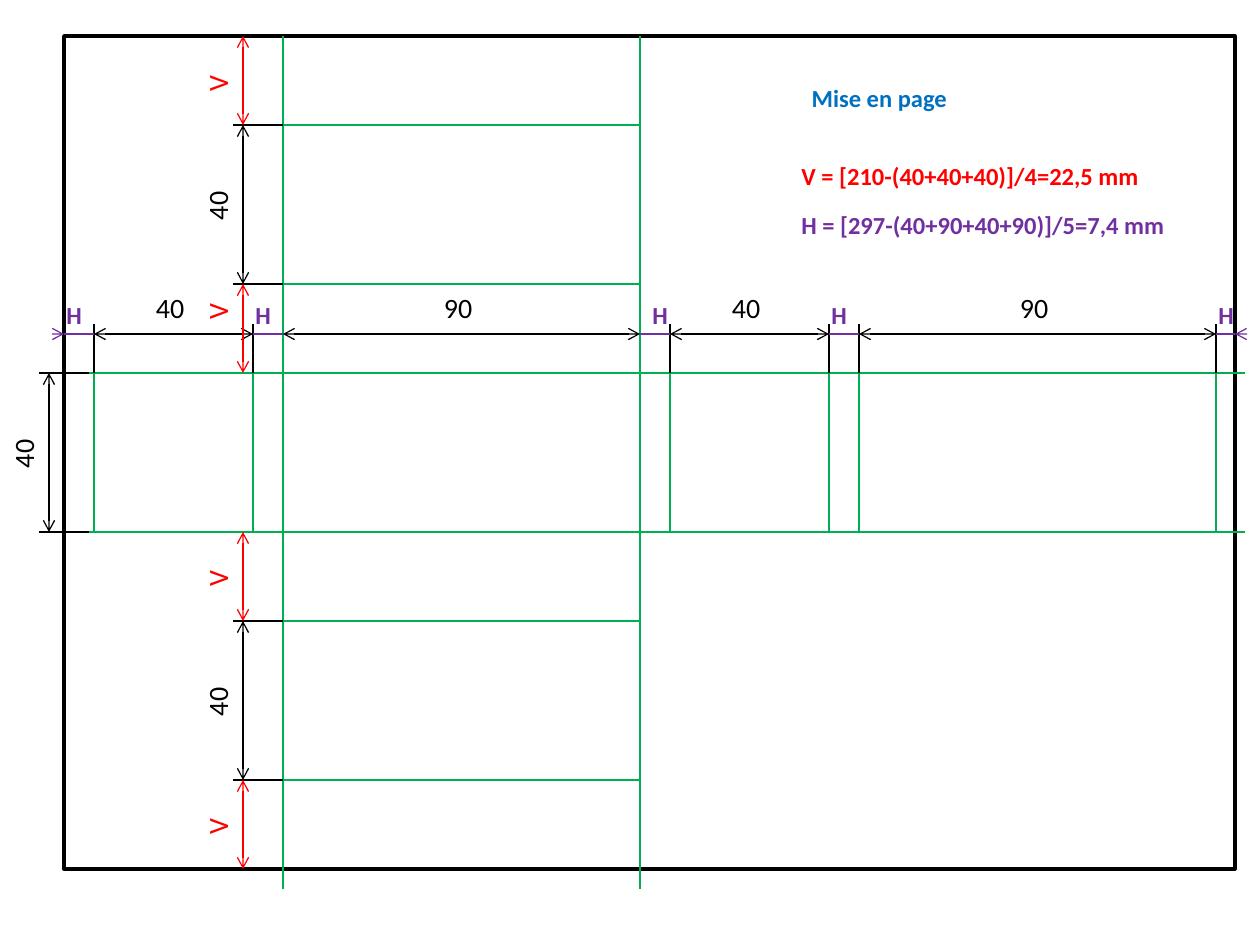
import itertools
import pptx
import pptx.dml.color
import pptx.enum.shapes
import pptx.enum.text
import pptx.oxml.ns
import pptx.util
import lxml.etree

PX = 914400 / 126
THEME = {
    "font": "Calibri",
    "black": "000000", "green": "00B050", "red": "FF0000",
    "purple": "7030A0", "blue": "0070C0",
    "dimension_size": 16, "note_size": 14,
    "thin": 0.75, "thick": 2,
}


def add_line(x1, y1, x2, y2, color, head=False, tail=False):
    connector = slide.shapes.add_connector(
        pptx.enum.shapes.MSO_CONNECTOR.STRAIGHT,
        *[round(value * PX) for value in (x1, y1, x2, y2)])
    connector.line.color.rgb = pptx.dml.color.RGBColor.from_string(THEME[color])
    connector.line.width = pptx.util.Pt(THEME["thin"])
    properties = connector.element.spPr
    outline = properties.find(pptx.oxml.ns.qn("a:ln"))
    for tag, wanted in (("a:headEnd", head), ("a:tailEnd", tail)):
        if wanted:
            lxml.etree.SubElement(outline, pptx.oxml.ns.qn(tag), type="arrow")
    lxml.etree.SubElement(properties, pptx.oxml.ns.qn("a:effectLst"))


def write_label(text, left, top, width, height, color, size="dimension_size",
                bold=False, rotation=0, shape=None):
    box = [round(value * PX) for value in (left, top, width, height)]
    shape = shape or slide.shapes.add_textbox(*box)
    shape.left, shape.top, shape.width, shape.height = box
    shape.rotation = rotation
    frame = shape.text_frame
    frame.word_wrap = False
    frame.auto_size = pptx.enum.text.MSO_AUTO_SIZE.SHAPE_TO_FIT_TEXT
    paragraph = frame.paragraphs[0]
    paragraph.alignment = pptx.enum.text.PP_ALIGN.LEFT
    run = paragraph.add_run()
    run.text = text
    run.font.name = THEME["font"]
    run.font.size = pptx.util.Pt(THEME[size])
    run.font.bold = bold
    run.font.color.rgb = pptx.dml.color.RGBColor.from_string(THEME[color])


presentation = pptx.Presentation()
presentation.slide_width = pptx.util.Inches(10)
presentation.slide_height = pptx.util.Inches(7.5)
slide = presentation.slides.add_slide(presentation.slide_layouts[5])

# Grid: gaps and faces alternate across and down the page
PAGE_LEFT, PAGE_TOP, PAGE_WIDTH, PAGE_HEIGHT = 64, 36, 1171, 833
PAGE_RIGHT = PAGE_LEFT + PAGE_WIDTH
SIDE, LENGTH, GAP_H, GAP_V = 159, 357, 30, 89
xs = list(itertools.accumulate(
    [PAGE_LEFT, GAP_H, SIDE, GAP_H, LENGTH, GAP_H, SIDE, GAP_H, LENGTH]))
ys = list(itertools.accumulate([PAGE_TOP] + [GAP_V, SIDE] * 3 + [GAP_V]))
columns = [(xs[i], xs[i + 1]) for i in (1, 3, 5, 7)]
rows = [(ys[i], ys[i + 1]) for i in (1, 3, 5)]
DIMENSION_X, DIMENSION_Y, SIDE_DIMENSION_X = 243, 334, 49
OVERHANG = 10

# Page frame and faces of the unfolded box
faces = [(columns[1], rows[0]), (columns[1], rows[2])]
faces += [(columns[i], rows[1]) for i in (3, 2, 0)]
page = ((PAGE_LEFT, PAGE_RIGHT), (PAGE_TOP, ys[-1]))
for (left, right), (top, bottom) in [page] + faces:
    is_page = left == PAGE_LEFT
    shape = slide.shapes.add_shape(
        pptx.enum.shapes.MSO_SHAPE.RECTANGLE,
        *[round(value * PX) for value in (left, top, right - left, bottom - top)])
    shape.shadow.inherit = False
    shape.fill.background()
    shape.line.color.rgb = pptx.dml.color.RGBColor.from_string(
        THEME["black" if is_page else "green"])
    shape.line.width = pptx.util.Pt(THEME["thick" if is_page else "thin"])

# Construction lines
for y in rows[1]:
    add_line(PAGE_LEFT, y, PAGE_RIGHT + OVERHANG, y, "green")
for x in columns[1]:
    add_line(x, PAGE_TOP, x, ys[-1] + 2 * OVERHANG, "green")

# Horizontal dimensions
for (left, right), value in zip(columns, ("40", "90", "40", "90")):
    add_line(left, DIMENSION_Y, right, DIMENSION_Y, "black", True, True)
    write_label(value, (left + right) / 2 - 30, 284, 58, 46, "black")
for column in (0, 2, 3):
    for x in columns[column]:
        add_line(x, rows[1][0], x, DIMENSION_Y - OVERHANG, "black")

# Vertical dimensions
for index, (top, bottom) in enumerate(rows):
    x = SIDE_DIMENSION_X if index == 1 else DIMENSION_X
    add_line(x, top, x, bottom, "black", True, True)
    for y in (top, bottom):
        add_line(x - OVERHANG, y, x + 40, y, "black")
    write_label("40", x - 55, (top + bottom) / 2 - 24, 58, 46, "black", rotation=270)

# Vertical gaps V; the second label sits higher, clear of the dimension line
for i, label_top in zip((0, 2, 4, 6), (57, 285, 552, 800)):
    add_line(DIMENSION_X, ys[i + 1], DIMENSION_X, ys[i], "red", True, True)
    write_label("V", 193, label_top, 48, 46, "red", rotation=270)

# Horizontal gaps H
gaps = [(xs[i], xs[i + 1]) for i in (0, 2, 4, 6)] + [(xs[-1], PAGE_RIGHT)]
for (left, right), label_left in zip(gaps, (54, 243, 640, 819, 1206)):
    add_line(left, DIMENSION_Y, right, DIMENSION_Y, "purple")
    write_label("H", label_left, 294, 40, 43, "purple", "note_size", True)
for outside, edge in ((PAGE_LEFT - OVERHANG, PAGE_LEFT), (PAGE_RIGHT + OVERHANG, PAGE_RIGHT)):
    add_line(outside, DIMENSION_Y, edge, DIMENSION_Y, "purple", tail=True)

# Title and formulas
write_label("Mise en page", 799, 76, 161, 43, "blue", "note_size", True,
            shape=slide.shapes.title)
write_label("V = [210-(40+40+40)]/4=22,5 mm", 789, 155, 365, 43, "red", "note_size", True)
write_label("H = [297-(40+90+40+90)]/5=7,4 mm", 789, 204, 392, 43, "purple", "note_size", True)

presentation.save("out.pptx")
